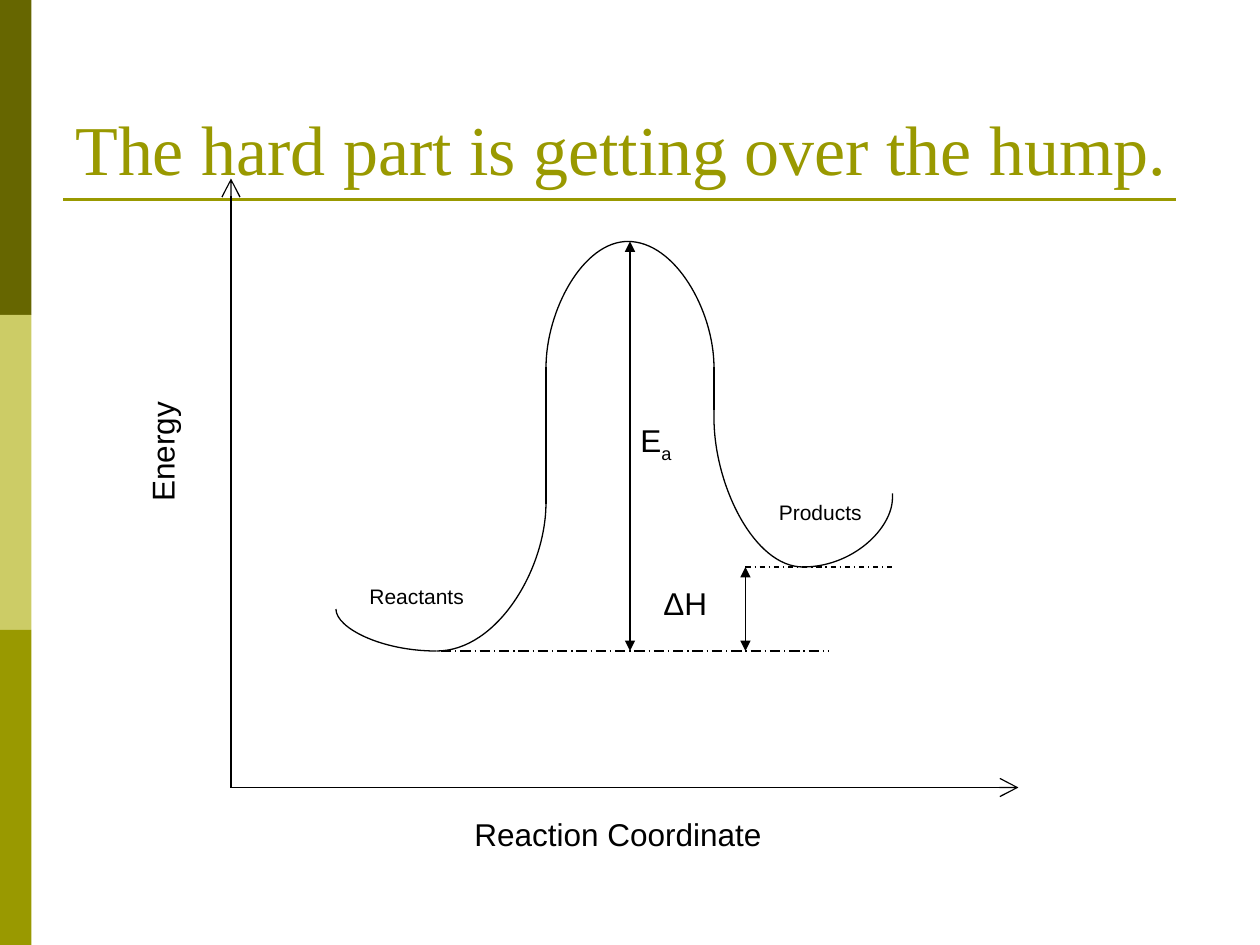
from dataclasses import dataclass

from lxml.etree import SubElement
from pptx import Presentation
from pptx.dml.color import RGBColor
from pptx.enum.dml import MSO_LINE
from pptx.enum.shapes import MSO_CONNECTOR, MSO_SHAPE
from pptx.enum.text import MSO_ANCHOR, MSO_AUTO_SIZE
from pptx.oxml.ns import qn
from pptx.util import Pt

PX = 7620
QUARTER = 0.55


@dataclass(frozen=True)
class Theme:
    """Colours, fonts and sizes of the slide."""
    dark: RGBColor = RGBColor(0x66, 0x66, 0x00)
    pale: RGBColor = RGBColor(0xCC, 0xCC, 0x66)
    accent: RGBColor = RGBColor(0x99, 0x99, 0x00)
    ink: RGBColor = RGBColor(0, 0, 0)
    title_font: str = "Times New Roman"
    label_font: str = "Arial"
    title_size: int = 40
    label_size: int = 18
    small_size: int = 12
    thin: float = 0.75
    rule: float = 1.5


THEME = Theme()


def add_line(slide, start, end, color=THEME.ink, width=THEME.thin,
             dash=None, head=None, tail=None, size="med"):
    """Draw a straight line with optional dash and arrowheads."""
    line = slide.shapes.add_connector(
        MSO_CONNECTOR.STRAIGHT, *(v * PX for v in (*start, *end)))
    line.line.color.rgb = color
    line.line.width = Pt(width)
    if dash:
        line.line.dash_style = dash
    outline = line.line._get_or_add_ln()
    for tag, kind in (("a:headEnd", head), ("a:tailEnd", tail)):
        if kind:
            SubElement(outline, qn(tag), type=kind, w=size, len=size)
    SubElement(line._element.spPr, qn("a:effectLst"))


def add_text(slide, box, text, font, size, color, subscript=""):
    """Place one line of text, with an optional subscript, and return its box."""
    label = slide.shapes.add_textbox(*(v * PX for v in box))
    paragraph = label.text_frame.paragraphs[0]
    paragraph.font.name = font
    paragraph.font.size = Pt(size)
    paragraph.font.color.rgb = color
    paragraph.add_run().text = text
    if subscript:
        lowered = paragraph.add_run()
        lowered.text = subscript
        lowered._r.get_or_add_rPr().set("baseline", "-25000")
    return label


def add_sidebar(slide, box):
    """Stack three equal colour bands in the box."""
    left, top, width, height = box
    bands = (THEME.dark, THEME.pale, THEME.accent)
    band_height = height // len(bands)
    for index, color in enumerate(bands):
        band = slide.shapes.add_shape(
            MSO_SHAPE.RECTANGLE, left * PX, (top + index * band_height) * PX,
            width * PX, band_height * PX)
        band.fill.solid()
        band.fill.fore_color.rgb = color
        band.line.fill.background()
        band.shadow.inherit = False


def add_title(slide, box):
    """Place the title at the foot of the box, with a rule below it."""
    left, top, width, height = box
    rule_y = top + height + 4
    add_line(slide, (left, rule_y), (left + width - 20, rule_y),
             THEME.accent, THEME.rule)
    title = add_text(slide, box, "The hard part is getting over the hump.",
                     THEME.title_font, THEME.title_size, THEME.accent)
    title.text_frame.word_wrap = True
    title.text_frame.vertical_anchor = MSO_ANCHOR.BOTTOM


def add_quarter_arc(slide, start, end, rise=0):
    """Draw a quarter ellipse leaving start level, with a short upright end."""
    (x1, y1), (x2, y2) = start, end
    points = [start, (x1 + (x2 - x1) * QUARTER, y1),
              (x2, y2 + (y1 - y2) * (1 - QUARTER)), end]
    if rise:
        points.append((x2, y2 - rise))
    points = [(x * PX, y * PX) for x, y in points]
    builder = slide.shapes.build_freeform(*points[0])
    builder.add_line_segments(points[1:], close=False)
    arc = builder.convert_to_shape()
    outline = next(arc._element.iter(qn("a:path")))
    controls = outline.findall(qn("a:lnTo"))[:3]
    bend = SubElement(outline, qn("a:cubicBezTo"))
    controls[0].addprevious(bend)
    for control in controls:
        bend.append(control[0])
        outline.remove(control)
    arc.fill.background()
    arc.line.color.rgb = THEME.ink
    arc.line.width = Pt(THEME.thin)
    arc.shadow.inherit = False


def add_energy_curve(slide, left, top):
    """Draw the reaction path from reactants over the hump to products."""
    reactants, peak, products = (196, 450), (378, 60), (545, 370)
    arcs = (
        (reactants, (300, 309), 9),
        (reactants, (100, 410), 0),
        (peak, (460, 180), 0),
        (peak, (300, 180), 0),
        (products, (630, 304), 4),
        (products, (460, 228), 8),
    )
    for (x1, y1), (x2, y2), rise in arcs:
        add_quarter_arc(slide, (left + x1, top + y1), (left + x2, top + y2), rise)
    for x, y1, y2 in ((300, 310, 180), (460, 180, 220)):
        add_line(slide, (left + x, top + y1), (left + x, top + y2))


def add_energy_diagram(slide, box):
    """Draw axes, curve, energy levels and labels in the box."""
    left, top, width, height = box
    reactant_y, product_y, peak_y = 450, 370, 60
    barrier_x, enthalpy_x = 380, 490
    axis = {"tail": "arrow", "size": "lg"}
    both_ends = {"head": "triangle", "tail": "triangle"}
    add_energy_curve(slide, left, top)
    lines = (
        ((0, height), (width, height), axis),
        ((0, height), (0, 0), axis),
        ((200, reactant_y), (570, reactant_y), {"dash": MSO_LINE.LONG_DASH_DOT}),
        ((barrier_x, reactant_y), (barrier_x, peak_y), both_ends),
        ((enthalpy_x, product_y), (630, product_y), {"dash": MSO_LINE.DASH_DOT}),
        ((enthalpy_x, product_y), (enthalpy_x, reactant_y), both_ends),
    )
    for (x1, y1), (x2, y2), style in lines:
        add_line(slide, (left + x1, top + y1), (left + x2, top + y2), **style)

    large, small = THEME.label_size, THEME.small_size
    labels = (
        ("Reaction Coordinate", "", (220, 600, 298, 48), large, 0),
        ("Energy", "", (-125, 236, 119, 48), large, 270),
        ("Reactants", "", (120, 380, 114, 36), small, 0),
        ("Products", "", (510, 300, 103, 36), small, 0),
        ("E", "a", (378, 225, 55, 48), large, 0),
        ("ΔH", "", (400, 380, 66, 48), large, 0),
    )
    for text, subscript, (x, y, w, h), size, rotation in labels:
        label = add_text(slide, (left + x, top + y, w, h), text,
                         THEME.label_font, size, THEME.ink, subscript)
        label.text_frame.word_wrap = False
        label.text_frame.auto_size = MSO_AUTO_SIZE.SHAPE_TO_FIT_TEXT
        label.rotation = rotation


def main():
    """Build and save the slide."""
    deck = Presentation()
    deck.slide_width, deck.slide_height = 1200 * PX, 900 * PX
    slide = deck.slides.add_slide(deck.slide_layouts[6])
    add_sidebar(slide, (0, 0, 30, 900))
    add_title(slide, (60, 36, 1080, 150))
    add_energy_diagram(slide, (220, 170, 750, 580))
    deck.save("out.pptx")


if __name__ == "__main__":
    main()
